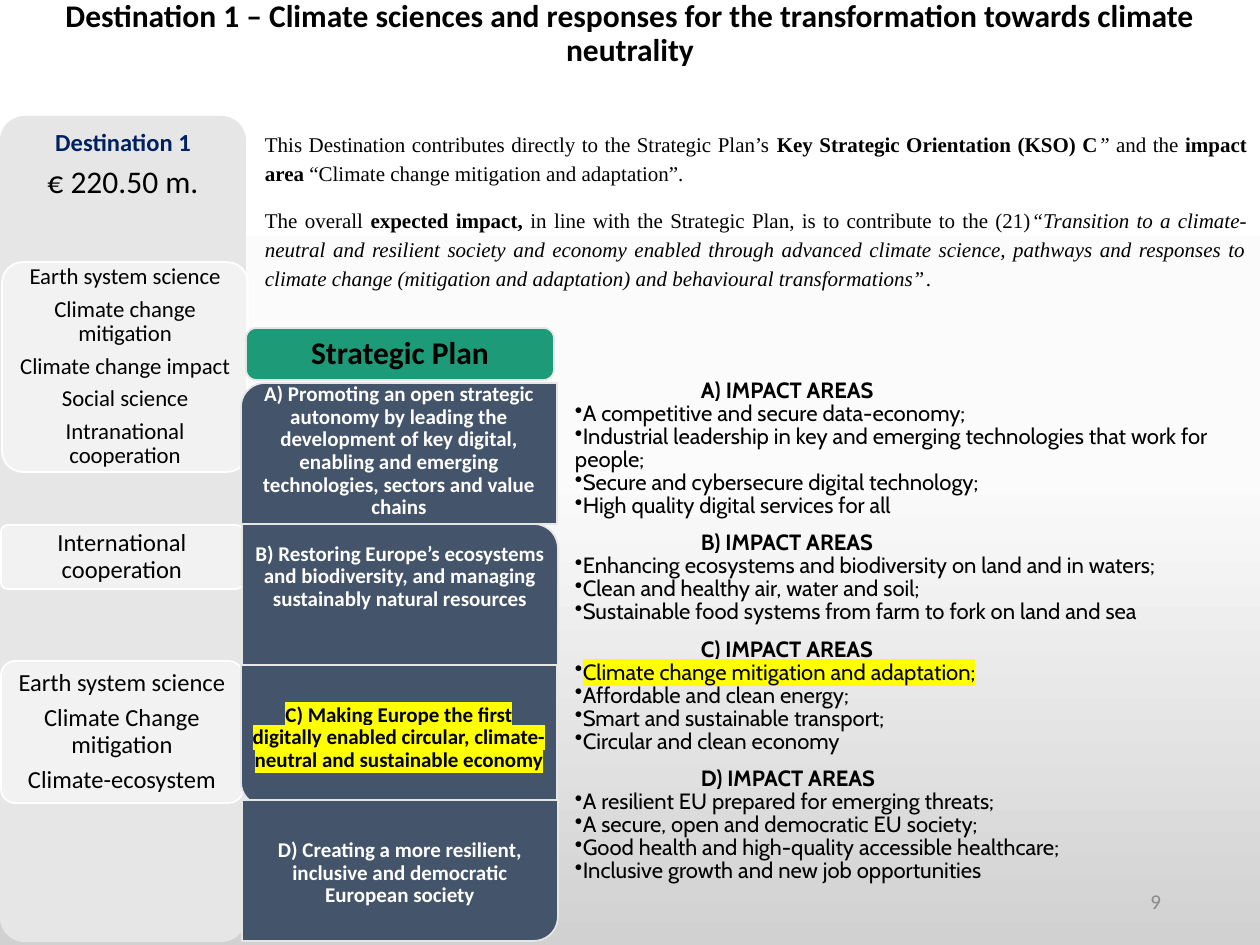
from copy import deepcopy
from math import cos, radians, sin

from lxml import etree
from pptx import Presentation
from pptx.dml.color import RGBColor
from pptx.enum.shapes import MSO_SHAPE
from pptx.enum.text import MSO_ANCHOR, PP_ALIGN
from pptx.oxml.ns import qn
from pptx.util import Emu, Pt

ROUNDED = MSO_SHAPE.ROUNDED_RECTANGLE
TOP, MIDDLE = MSO_ANCHOR.TOP, MSO_ANCHOR.MIDDLE
LEFT, CENTER, RIGHT, JUSTIFY = PP_ALIGN.LEFT, PP_ALIGN.CENTER, PP_ALIGN.RIGHT, PP_ALIGN.JUSTIFY
PX_PER_INCH = 126
TOP_LEFT, TOP_RIGHT, BOTTOM_RIGHT, BOTTOM_LEFT = range(4)
BLACK, WHITE, PALE, YELLOW = "000000", "FFFFFF", "E7E6E6", "FFFF00"


def px(length):
    return Emu(round(length * 914400 / PX_PER_INCH))


def rgb(value):
    return RGBColor.from_string(value)


class Deck:
    font = "Calibri"
    inset = (13, 6, 13, 6)

    def __init__(self):
        self.prs = Presentation()
        self.prs.slide_width, self.prs.slide_height = px(1260), px(945)
        self.slide = self.prs.slides.add_slide(self.prs.slide_layouts[5])

    def background(self, stops):
        fill = self.slide.background.fill
        fill.gradient()
        fill.gradient_angle = 270
        gradient = next(self.slide.element.iter(qn("a:gsLst")))
        for _ in range(len(stops) - len(gradient)):
            gradient.append(deepcopy(gradient[0]))
        for stop, (position, color) in zip(fill.gradient_stops, stops):
            stop.position = position
            stop.color.rgb = rgb(color)

    def frame(self, shape, anchor, inset):
        frame = shape.text_frame
        frame.word_wrap = True
        frame.vertical_anchor = anchor
        frame.margin_left, frame.margin_top, frame.margin_right, frame.margin_bottom = map(px, inset)
        return frame

    def style(self, run, size, color=BLACK, bold=False, italic=False, font=None, highlight=None):
        run.font.size, run.font.bold, run.font.italic = Pt(size), bold, italic
        run.font.name = font or self.font
        run.font.color.rgb = rgb(color)
        if highlight:
            mark = etree.Element(qn("a:highlight"))
            etree.SubElement(mark, qn("a:srgbClr"), val=highlight)
            run.font.fill
            run.font._element.find(qn("a:solidFill")).addnext(mark)

    def paragraph(self, frame, runs, align=CENTER, spacing=0.9, after=0):
        first = frame.paragraphs[0]
        paragraph = frame.add_paragraph() if first.runs else first
        paragraph.alignment, paragraph.line_spacing = align, spacing
        paragraph.space_before, paragraph.space_after = Pt(0), Pt(after)
        for text, style in runs:
            run = paragraph.add_run()
            run.text = text
            self.style(run, **style)
        return paragraph

    def title(self, box, text, **style):
        title = self.slide.shapes.title
        title.left, title.top, title.width, title.height = map(px, box)
        frame = self.frame(title, TOP, (13, 0, 13, 0))
        self.paragraph(frame, [(text, style)])

    def text(self, box, anchor=TOP, inset=inset):
        return self.frame(self.slide.shapes.add_textbox(*map(px, box)), anchor, inset)

    def paint(self, shape, fill, line=None, alpha=None):
        shape.shadow.inherit = False
        shape.fill.solid()
        shape.fill.fore_color.rgb = rgb(fill)
        if alpha:
            color = shape._element.spPr.find(qn("a:solidFill"))[0]
            etree.SubElement(color, qn("a:alpha"), val=str(alpha * 1000))
        if line:
            shape.line.color.rgb = rgb(line)
            shape.line.width = Pt(1)
        else:
            shape.line.fill.background()

    def rounded(self, box, fill, line=None, alpha=None, corner=0.1):
        shape = self.slide.shapes.add_shape(ROUNDED, *map(px, box))
        shape.adjustments[0] = corner
        self.paint(shape, fill, line, alpha)
        return self.frame(shape, MIDDLE, (4, 3, 4, 3))

    def quadrant(self, box, rounded_corner, inset, radius=24):
        x, y, w, h = box
        points = []
        corners = [(x, y, 1, 1), (x + w, y, -1, 1), (x + w, y + h, -1, -1), (x, y + h, 1, -1)]
        for index, (cx, cy, inward_x, inward_y) in enumerate(corners):
            if index != rounded_corner:
                points.append((px(cx), px(cy)))
                continue
            for step in range(0, 91, 10):
                angle = radians(180 + 90 * index + step)
                points.append((px(cx + radius * (inward_x + cos(angle))),
                               px(cy + radius * (inward_y + sin(angle)))))
        builder = self.slide.shapes.build_freeform(*points[0])
        builder.add_line_segments(points[1:], close=True)
        shape = builder.convert_to_shape()
        self.paint(shape, "44546A", PALE)
        return self.frame(shape, MIDDLE, inset)

    def bullet(self, paragraph):
        props = paragraph._p.get_or_add_pPr()
        props.set("marL", "0")
        props.set("indent", str(-px(32)))
        etree.SubElement(props, qn("a:buChar"), char="•")


IMPACT_AREAS = {
    "A": ["A competitive and secure data-economy;",
          "Industrial leadership in key and emerging technologies that work for people;",
          "Secure and cybersecure digital technology;",
          "High quality digital services for all"],
    "B": ["Enhancing ecosystems and biodiversity on land and in waters;",
          "Clean and healthy air, water and soil;",
          "Sustainable food systems from farm to fork on land and sea"],
    "C": ["Climate change mitigation and adaptation;", "Affordable and clean energy;",
          "Smart and sustainable transport;", "Circular and clean economy"],
    "D": ["A resilient EU prepared for emerging threats;",
          "A secure, open and democratic EU society;",
          "Good health and high-quality accessible healthcare;",
          "Inclusive growth and new job opportunities"],
}
TOPICS = [
    ((2, 262, 246, 210), 13, ["Earth system science", "Climate change mitigation",
                              "Climate change impact", "Social science", "Intranational cooperation"]),
    ((1, 525, 242, 64), 14, ["International cooperation"]),
    ((1, 661, 242, 142), 14, ["Earth system science", "Climate Change mitigation", "Climate-ecosystem"]),
]
ORIENTATIONS = [
    (241, 383, TOP_LEFT, (11, 0, 11, 4), {"color": WHITE},
     "A) Promoting an open strategic autonomy by leading the development of key digital, "
     "enabling and emerging technologies, sectors and value chains"),
    (242, 524, TOP_RIGHT, (11, 0, 11, 35), {"color": WHITE},
     "B) Restoring Europe’s ecosystems and biodiversity, and managing sustainably natural resources"),
    (241, 665, BOTTOM_LEFT, (11, 5, 11, 0), {"highlight": YELLOW},
     "C) Making Europe the first digitally enabled circular, climate-neutral and sustainable economy"),
    (242, 800, BOTTOM_RIGHT, (11, 6, 11, 0), {"color": WHITE},
     "D) Creating a more resilient, inclusive and democratic European society"),
]
SERIF = {"size": 12, "font": "Times New Roman"}
STRONG, SLANTED = SERIF | {"bold": True}, SERIF | {"italic": True}
INTRO = [
    [("This Destination contributes directly to the Strategic Plan’s ", SERIF),
     ("Key Strategic Orientation (KSO) C", STRONG), ("”", SLANTED), (" and the ", SERIF),
     ("impact area", STRONG), (" “Climate change mitigation and adaptation”.", SERIF)],
    [("The overall ", SERIF), ("expected impact, ", STRONG),
     ("in line with the Strategic Plan, is to contribute to the (21)", SERIF),
     ("“Transition to a climate-neutral and resilient society and economy enabled through advanced "
      "climate science, pathways and responses to climate change (mitigation and adaptation) and "
      "behavioural transformations”", SLANTED), (".", SERIF)],
]


def main():
    deck = Deck()
    deck.background([(0, WHITE), (0.5, "FBFBFB"), (1, "D1D1D1")])
    deck.title((42, 0, 1176, 105), "Destination 1 – Climate sciences and responses for the "
               "transformation towards climate neutrality", size=18, bold=True)

    impacts = deck.text((562, 374, 698, 567))
    for letter, areas in IMPACT_AREAS.items():
        cabin = {"size": 12.6, "font": "Cabin"}
        heading = deck.paragraph(impacts, [(f"{letter}) IMPACT AREAS", cabin | {"bold": True})], LEFT, 0.87)
        heading._p.get_or_add_pPr().set("marL", str(px(126)))
        for area in areas:
            mark = YELLOW if area.startswith("Climate change") else None
            after = 8 if area == areas[-1] else 0
            deck.bullet(deck.paragraph(impacts, [(area, cabin | {"highlight": mark})], LEFT, 0.87, after))

    page = deck.text((890, 876, 284, 50), MIDDLE)
    deck.paragraph(page, [("9", {"size": 12, "color": "898989"})], RIGHT, 1.0)

    deck.rounded((0, 116, 246, 826), PALE)
    budget = deck.text((0, 116, 246, 99), MIDDLE, (5, 5, 5, 5))
    deck.paragraph(budget, [("Destination 1", {"size": 14, "color": "002060", "bold": True})], after=5)
    deck.paragraph(budget, [("€ 220.50 m.", {"size": 18})])

    for box, size, topics in TOPICS:
        card = deck.rounded(box, WHITE, WHITE, alpha=49)
        for topic in topics:
            deck.paragraph(card, [(topic, {"size": size})], after=round(size * 0.35, 1))

    for left, top, corner, inset, look, statement in ORIENTATIONS:
        quadrant = deck.quadrant((left, top, 316, 141), corner, inset)
        deck.paragraph(quadrant, [(statement, {"size": 12, "bold": True} | look)])

    plan = deck.rounded((246, 328, 308, 52), "1D9A78", PALE, corner=0.2)
    deck.paragraph(plan, [("Strategic Plan", {"size": 18, "bold": True})])

    intro = deck.text((252, 122, 1008, 176))
    for runs in INTRO:
        deck.paragraph(intro, runs, JUSTIFY, 1.15, 10)

    deck.prs.save("out.pptx")


if __name__ == "__main__":
    main()
